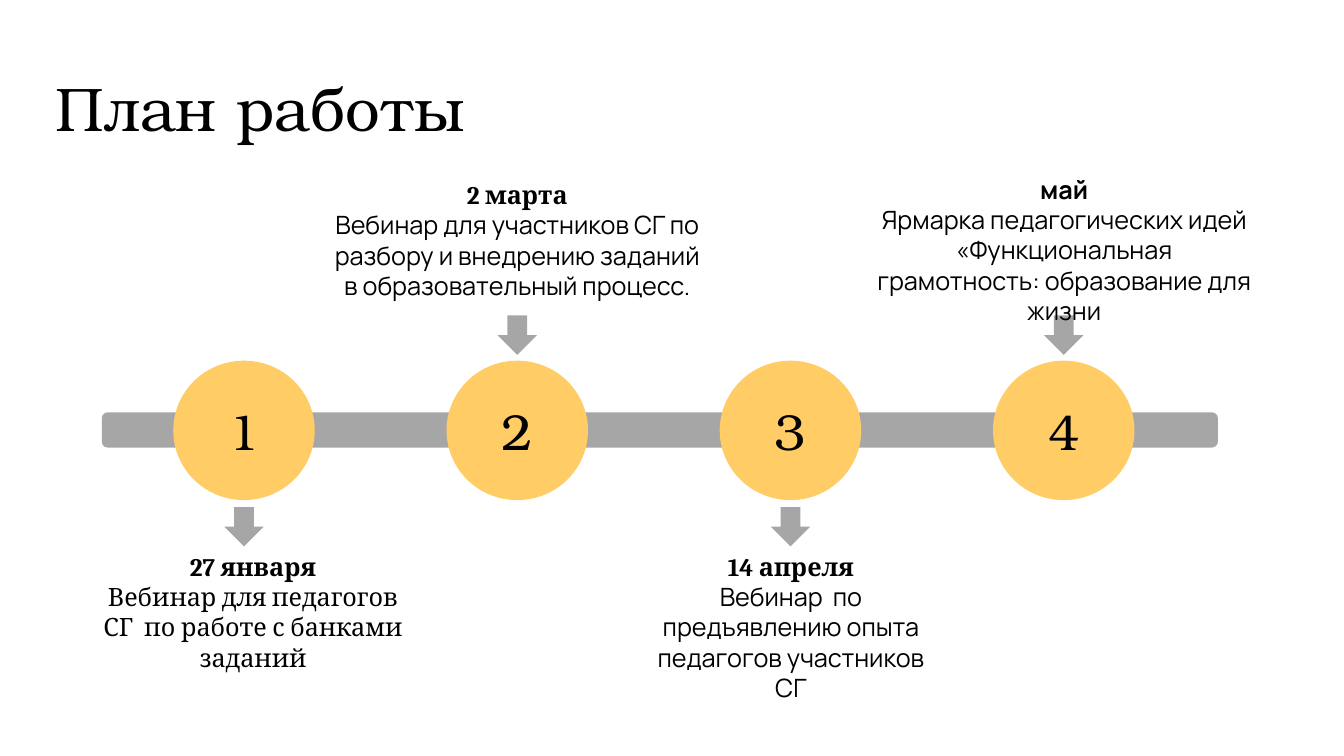
from pptx import Presentation
from pptx import util as u
from pptx.dml.color import RGBColor
from pptx.enum import shapes, text

GREY, YELLOW, BLACK = "A6A6A6", "FFCC66", "000000"
SERIF, BODY, HEADING = "Cambria", "Manrope", "TeX Gyre Bonum"
TITLE = "План работы"
# date, date font, description, description font, text box (left, top, width)
STAGES = [
    ("27 января", SERIF, "Вебинар для педагогов СГ  по работе с банками заданий",
     SERIF, (0.83, 5.42, 3.36)),
    ("2 марта", SERIF, "Вебинар для участников СГ по разбору и внедрению заданий "
     "в образовательный процесс.", BODY, (3.22, 1.73, 3.82)),
    ("14 апреля", SERIF, "Вебинар  по предъявлению опыта педагогов участников СГ",
     BODY, (6.28, 5.42, 3.13)),
    ("май", BODY, "Ярмарка педагогических идей «Функциональная грамотность: "
     "образование для жизни", BODY, (8.56, 1.68, 3.99)),
]
FIRST_CENTER, STEP = 2.42, 2.71
CIRCLE_W, CIRCLE_H, CIRCLE_TOP = 1.32, 1.3, 3.62
ARROW, ARROW_ABOVE, ARROW_BELOW = 0.39, 3.13, 5.03
TEXT_H = 1.31


def color(value):
    return RGBColor.from_string(value)


def box(left, top, width, height):
    return [u.Inches(v) for v in (left, top, width, height)]


def add_filled(parent, kind, place, fill):
    sp = parent.add_shape(kind, *box(*place))
    sp.shadow.inherit = False
    sp.fill.solid()
    sp.fill.fore_color.rgb = color(fill)
    sp.line.fill.background()
    return sp


def add_run(p, words, size, font, bold=False):
    r = p.add_run()
    r.text = words
    r.font.size = u.Pt(size)
    r.font.name = font
    r.font.bold = bold
    r.font.color.rgb = color(BLACK)


prs = Presentation()
prs.slide_width, prs.slide_height = u.Inches(13.33), u.Inches(7.5)
s = prs.slides.add_slide(prs.slide_layouts[5])

title = s.shapes.title
title.left, title.top, title.width, title.height = box(0.45, 0.38, 11.5, 1.45)
title.text_frame.vertical_anchor = text.MSO_ANCHOR.MIDDLE
p = title.text_frame.paragraphs[0]
p.alignment = text.PP_ALIGN.LEFT
p.line_spacing = 0.9
add_run(p, TITLE, 44, HEADING)

timeline = s.shapes.add_group_shape().shapes
add_filled(timeline, shapes.MSO_SHAPE.ROUNDED_RECTANGLE, (1.01, 4.09, 11.07, 0.35), GREY)

for i, (date, date_font, description, font, (left, top, width)) in enumerate(STAGES):
    center = FIRST_CENTER + i * STEP
    circle = add_filled(timeline, shapes.MSO_SHAPE.OVAL,
                        (center - CIRCLE_W / 2, CIRCLE_TOP, CIRCLE_W, CIRCLE_H), YELLOW)
    circle.line.color.rgb = color(YELLOW)
    circle.line.width = u.Pt(6)
    circle.text_frame.vertical_anchor = text.MSO_ANCHOR.MIDDLE
    p = circle.text_frame.paragraphs[0]
    p.alignment = text.PP_ALIGN.CENTER
    add_run(p, str(i + 1), 36, HEADING)

    arrow_top = ARROW_ABOVE if i % 2 else ARROW_BELOW
    add_filled(s.shapes, shapes.MSO_SHAPE.DOWN_ARROW,
               (center - ARROW / 2, arrow_top, ARROW, ARROW), GREY)

    tf = s.shapes.add_textbox(*box(left, top, width, TEXT_H)).text_frame
    tf.word_wrap = True
    tf.auto_size = text.MSO_AUTO_SIZE.SHAPE_TO_FIT_TEXT
    p = tf.paragraphs[0]
    p.alignment = text.PP_ALIGN.CENTER
    add_run(p, date, 18, date_font, bold=True)
    p = tf.add_paragraph()
    p.alignment = text.PP_ALIGN.CENTER
    add_run(p, description, 18, font)

prs.save("out.pptx")
